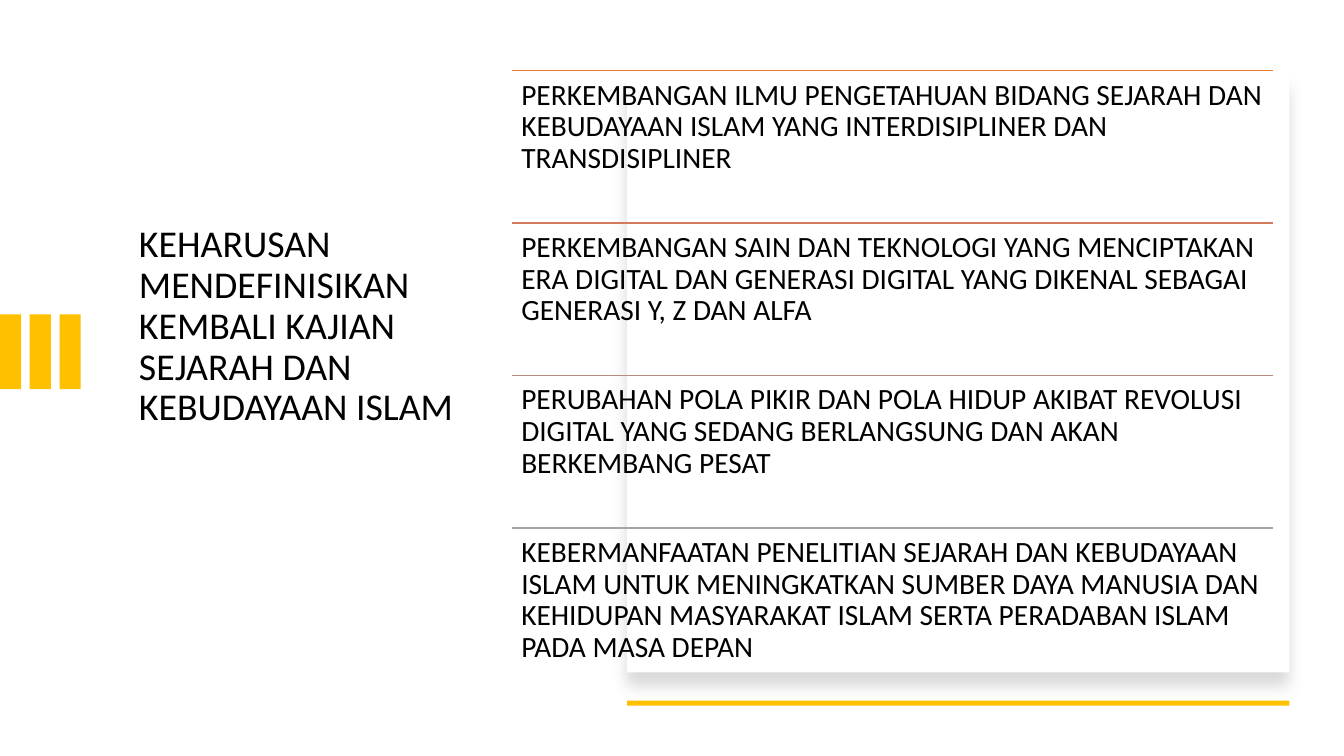
from lxml.etree import SubElement
from pptx import Presentation
from pptx.dml.color import RGBColor
from pptx.enum.shapes import MSO_CONNECTOR, MSO_SHAPE
from pptx.enum.text import MSO_ANCHOR
from pptx.oxml.ns import qn
from pptx.util import Inches, Pt

TITLE = "KEHARUSAN MENDEFINISIKAN KEMBALI KAJIAN SEJARAH DAN KEBUDAYAAN ISLAM"
REASONS = [
    ("ED7D31", "PERKEMBANGAN ILMU PENGETAHUAN BIDANG SEJARAH DAN KEBUDAYAAN ISLAM "
               "YANG INTERDISIPLINER DAN TRANSDISIPLINER"),
    ("D17B5C", "PERKEMBANGAN SAIN DAN TEKNOLOGI YANG MENCIPTAKAN ERA DIGITAL DAN "
               "GENERASI DIGITAL YANG DIKENAL SEBAGAI GENERASI Y, Z DAN ALFA"),
    ("B98A82", "PERUBAHAN POLA PIKIR DAN POLA HIDUP AKIBAT REVOLUSI DIGITAL YANG "
               "SEDANG BERLANGSUNG DAN AKAN BERKEMBANG PESAT"),
    ("A5A5A5", "KEBERMANFAATAN PENELITIAN SEJARAH DAN KEBUDAYAAN ISLAM UNTUK "
               "MENINGKATKAN SUMBER DAYA MANUSIA DAN KEHIDUPAN MASYARAKAT ISLAM "
               "SERTA PERADABAN ISLAM PADA MASA DEPAN"),
]
GOLD = "FFC000"


def color(value):
    return RGBColor.from_string(value)


def add_rectangle(slide, left, top, width, height, fill):
    shape = slide.shapes.add_shape(
        MSO_SHAPE.RECTANGLE, Inches(left), Inches(top), Inches(width), Inches(height))
    shape.shadow.inherit = False
    shape.fill.solid()
    shape.fill.fore_color.rgb = color(fill)
    shape.line.fill.background()
    return shape


def add_text(slide, left, top, width, height, text, size, side_inset, top_inset):
    box = slide.shapes.add_textbox(
        Inches(left), Inches(top), Inches(width), Inches(height))
    frame = box.text_frame
    frame.word_wrap = True
    frame.vertical_anchor = MSO_ANCHOR.TOP
    frame.margin_left = frame.margin_right = Inches(side_inset)
    frame.margin_top = frame.margin_bottom = Inches(top_inset)
    paragraph = frame.paragraphs[0]
    paragraph.text = text
    paragraph.line_spacing = 0.9
    paragraph.font.name = "Calibri"
    paragraph.font.size = Pt(size)
    paragraph.font.color.rgb = color("000000")


def add_rule(slide, left, top, width, stroke):
    rule = slide.shapes.add_connector(
        MSO_CONNECTOR.STRAIGHT, Inches(left), Inches(top), Inches(left + width), Inches(top))
    rule.line.color.rgb = color(stroke)
    rule.line.width = Pt(1)
    SubElement(rule._element.spPr, qn("a:effectLst"))


def add_drop_shadow(shape):
    effects = shape._element.spPr.find(qn("a:effectLst"))
    shadow = SubElement(effects, qn("a:outerShdw"), blurRad=str(Pt(11)),
                        dist=str(Pt(10)), dir="5400000", algn="t", rotWithShape="0")
    tint = SubElement(shadow, qn("a:srgbClr"), val="000000")
    SubElement(tint, qn("a:alpha"), val="15000")


def add_accent_bars(slide, left, top, width, height, count=3):
    bar_width = 0.21
    step = (width - bar_width) / (count - 1)
    for index in range(count):
        add_rectangle(slide, left + index * step, top, bar_width, height, GOLD)


def add_panel(slide, left, top, width, height):
    add_drop_shadow(add_rectangle(slide, left, top, width, height, "FFFFFF"))
    add_rectangle(slide, left, top + height + 0.28, width, 0.05, GOLD)


def add_reasons(slide, left, top, width, height):
    row_height = height / len(REASONS)
    for index, (stroke, text) in enumerate(REASONS):
        row_top = top + index * row_height
        add_rule(slide, left, row_top, width, stroke)
        add_text(slide, left, row_top, width, row_height, text, 21, 0.09, 0.09)


def main():
    presentation = Presentation()
    presentation.slide_width = Inches(13.33)
    presentation.slide_height = Inches(7.5)
    slide = presentation.slides.add_slide(presentation.slide_layouts[6])
    add_text(slide, 1.28, 2.18, 3.32, 2.61, TITLE, 27, 0.1, 0.05)
    add_accent_bars(slide, 0, 3.12, 0.8, 0.74)
    add_panel(slide, 6.22, 0.74, 6.57, 5.93)
    add_reasons(slide, 5.08, 0.7, 7.55, 6.05)
    presentation.save("out.pptx")


if __name__ == "__main__":
    main()
